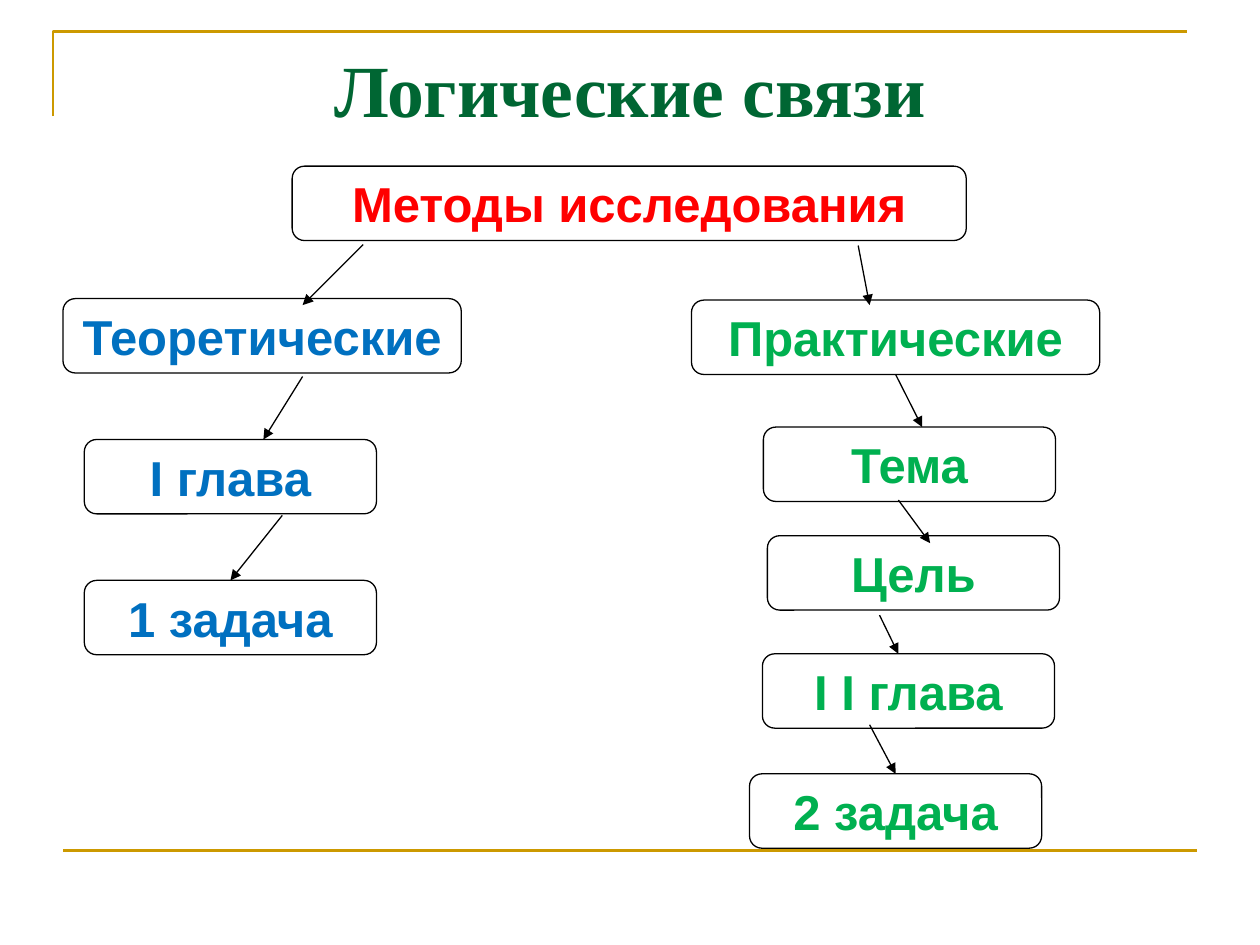
from lxml.etree import SubElement
from pptx import Presentation
from pptx.dml.color import RGBColor
from pptx.enum.shapes import MSO_CONNECTOR as Connector, MSO_SHAPE as Shape
from pptx.enum.text import MSO_ANCHOR as Anchor, PP_ALIGN as Align
from pptx.oxml.ns import qn
from pptx.util import Cm, Pt

TITLE = "Логические связи"
GOLD, DARK_GREEN, BLACK, WHITE = "CC9900", "006633", "000000", "FFFFFF"
RED, BLUE, GREEN = "FF0000", "0070C0", "00B050"
BOX_WIDTH, BOX_HEIGHT = 5.89, 1.5
THEORY_TOP, THEORY_STEP = 6.02, 2.84

ROOT = ("Методы исследования", 5.89, 3.35, 13.59)
THEORY = [("Теоретические", 1.27, 8.03), ("I глава", 1.7, BOX_WIDTH), ("1 задача", 1.7, BOX_WIDTH)]
PRACTICE = [
    ("Практические", 13.94, 6.05, 8.23),
    ("Тема", 15.39, 8.61, BOX_WIDTH),
    ("Цель", 15.47, 10.8, BOX_WIDTH),
    ("I I глава", 15.37, 13.18, BOX_WIDTH),
    ("2 задача", 15.11, 15.6, BOX_WIDTH),
]
ARROWS = [
    ((7.32, 4.93), (6.1, 6.15), None, None),
    ((6.1, 7.59), (5.31, 8.86), None, None),
    ((5.69, 10.39), (4.7, 11.71), None, "1 задача"),
    ((17.3, 4.95), (17.53, 6.15), None, None),
    ((18.11, 7.52), (18.59, 8.61), "Практические", None),
    ((18.11, 10.08), (18.75, 10.95), None, None),
    ((17.73, 12.4), (18.11, 13.18), None, None),
    ((17.53, 14.61), (18.11, 15.54), None, "2 задача"),
]


def color(value):
    return RGBColor.from_string(value)


def style_line(line, value, width):
    line.color.rgb = color(value)
    line.width = Pt(width)


def write(shape, text, font_name, size, value, anchor, space_before):
    text_frame = shape.text_frame
    text_frame.text = text
    text_frame.word_wrap = True
    text_frame.vertical_anchor = anchor
    paragraph = text_frame.paragraphs[0]
    paragraph.alignment = Align.CENTER
    paragraph.space_before = Pt(space_before)
    font = paragraph.runs[0].font
    font.name, font.size, font.bold = font_name, Pt(size), True
    font.color.rgb = color(value)


def add_box(slide, text, left, top, width, value):
    box = slide.shapes.add_shape(
        Shape.ROUNDED_RECTANGLE, Cm(left), Cm(top), Cm(width), Cm(BOX_HEIGHT))
    box.shadow.inherit = False
    box.fill.solid()
    box.fill.fore_color.rgb = color(WHITE)
    style_line(box.line, BLACK, 0.75)
    write(box, text, "Arial", 28, value, Anchor.MIDDLE, 6)
    return box


def add_line(slide, start, end, value, width):
    points = [Cm(position) for position in start + end]
    connector = slide.shapes.add_connector(Connector.STRAIGHT, *points)
    style_line(connector.line, value, width)
    SubElement(connector._element.spPr, qn("a:effectLst"))
    return connector


def add_frame(slide):
    builder = slide.shapes.build_freeform(Cm(1.07), Cm(2.34))
    builder.add_line_segments(
        [(Cm(1.07), Cm(0.64)), (Cm(23.93), Cm(0.64))], close=False)
    corner = builder.convert_to_shape()
    corner.shadow.inherit = False
    corner.fill.background()
    style_line(corner.line, GOLD, 1.5)
    add_line(slide, (1.27, 17.15), (24.13, 17.15), GOLD, 1.5)


def main():
    presentation = Presentation()
    presentation.slide_width, presentation.slide_height = Cm(25.4), Cm(19.05)
    slide = presentation.slides.add_slide(presentation.slide_layouts[5])
    add_frame(slide)

    title = slide.shapes.title
    title.left, title.top, title.width, title.height = Cm(1.27), Cm(0.76), Cm(22.86), Cm(3.18)
    write(title, TITLE, "Times New Roman", 42, DARK_GREEN, Anchor.TOP, 5)

    add_box(slide, *ROOT, RED)
    boxes = {}
    for index, (text, left, width) in enumerate(THEORY):
        top = THEORY_TOP + index * THEORY_STEP
        boxes[text] = add_box(slide, text, left, top, width, BLUE)
    for text, left, top, width in PRACTICE:
        boxes[text] = add_box(slide, text, left, top, width, GREEN)

    for start, end, source, target in ARROWS:
        arrow = add_line(slide, start, end, BLACK, 0.75)
        SubElement(arrow.line._get_or_add_ln(), qn("a:tailEnd"), type="triangle")
        if source:
            arrow.begin_connect(boxes[source], 2)
        if target:
            arrow.end_connect(boxes[target], 0)

    presentation.save("out.pptx")


if __name__ == "__main__":
    main()
